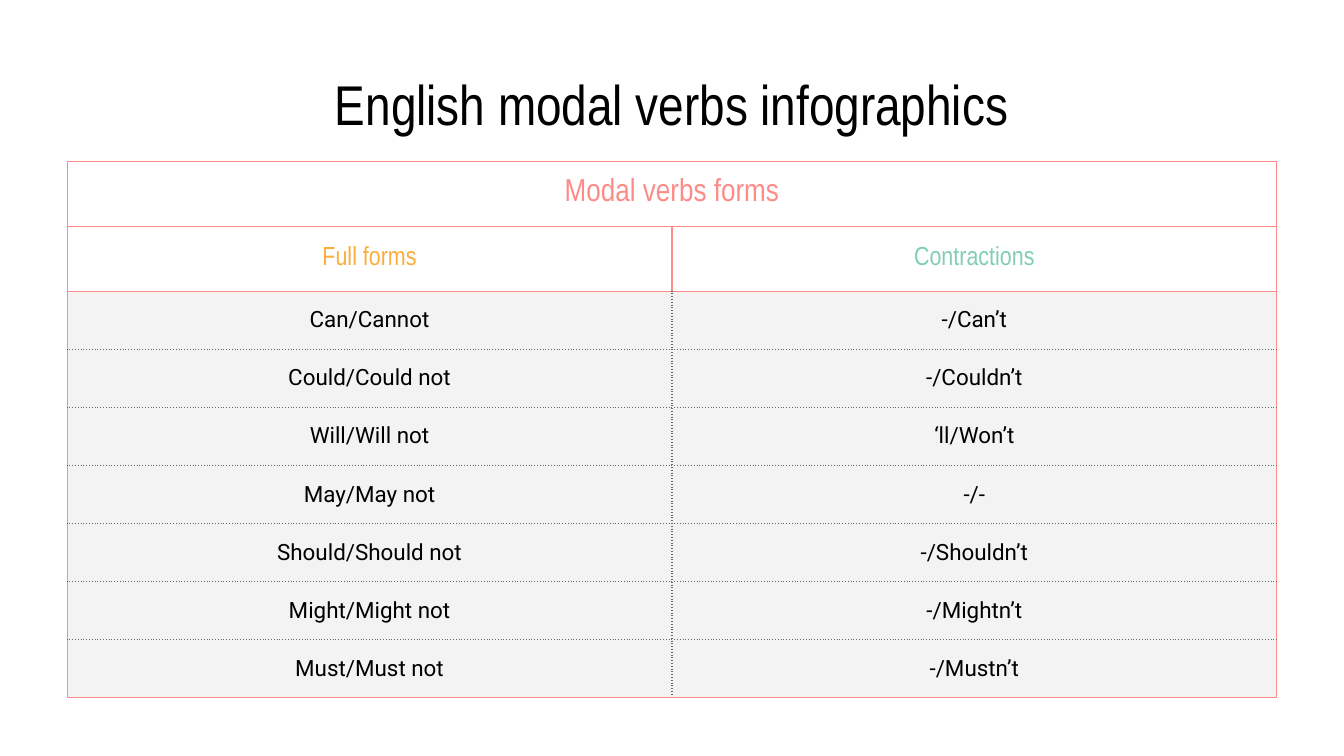
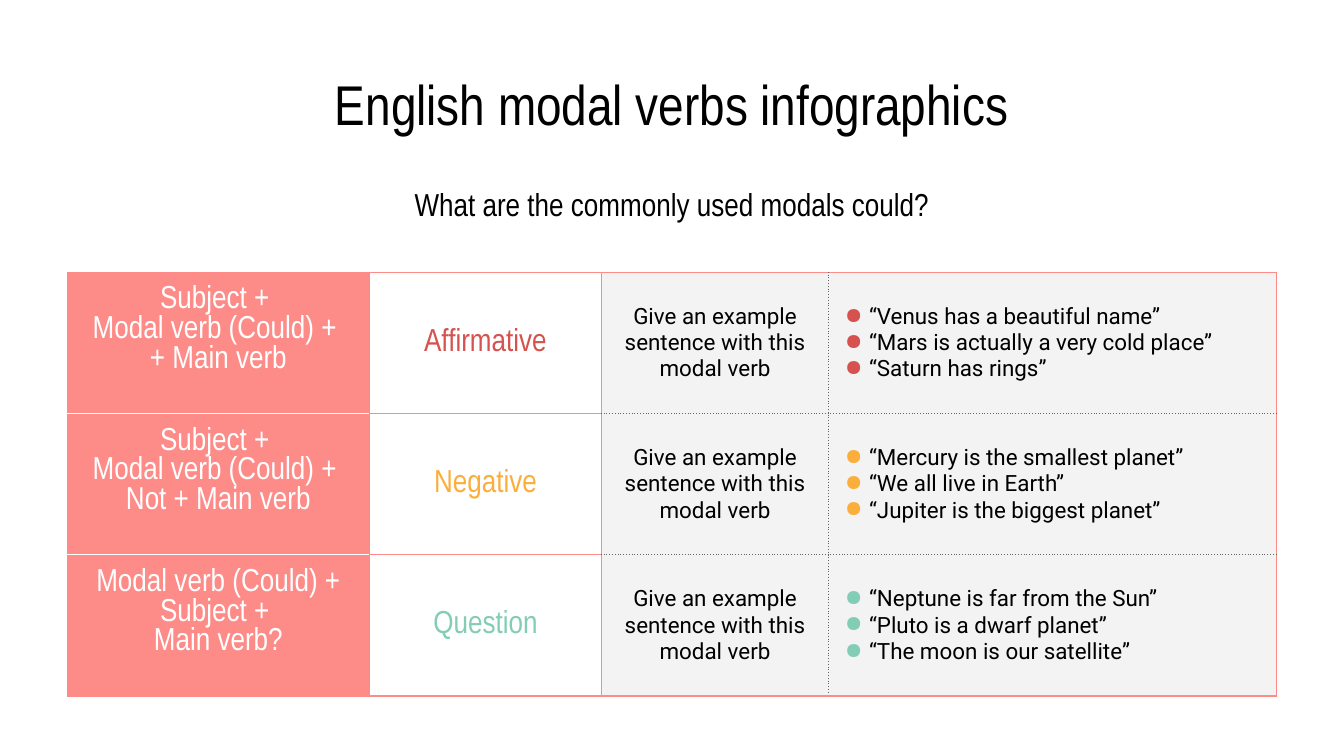
from dataclasses import dataclass

from lxml import etree
from pptx import Presentation
from pptx.dml.color import RGBColor
from pptx.enum import text
from pptx.oxml import ns
from pptx.util import Pt


@dataclass(frozen=True)
class Theme:
    coral: str = "FD8C89"
    red: str = "D5524E"
    amber: str = "FBAE3C"
    mint: str = "83CDB7"
    grey: str = "F3F3F3"
    dots: str = "666666"
    black: str = "000000"
    white: str = "FFFFFF"
    heading: str = "Arial Narrow"
    body: str = "Roboto"
    title_size: int = 30
    lead_size: int = 17
    label_size: int = 14
    body_size: int = 12
    line: float = 0.75


THEME = Theme()
# Border codes: colour and dash
BORDERS = {
    "c": (THEME.coral, "solid"),
    "d": (THEME.dots, "sysDot"),
    "w": (THEME.white, "solid"),
}
MARGIN, WIDTH = 36, 648
PAD = 7.2
TITLE = "English modal verbs infographics"


def add_xml(parent, tag, **attrs):
    return etree.SubElement(parent, ns.qn(tag), **attrs)


def edges(left, right, inner, i, count):
    """Border codes in the order left, top, right, bottom; coral outside."""
    top = "c" if i == 0 else inner
    bottom = "c" if i == count - 1 else inner
    return left + top + right + bottom


class Deck:
    def __init__(self, theme):
        self.theme = theme
        self.prs = Presentation()
        self.prs.slide_width, self.prs.slide_height = Pt(720), Pt(405)
        self.s = None

    def slide(self, title):
        self.s = self.prs.slides.add_slide(self.prs.slide_layouts[6])
        self.textbox(title, MARGIN, 32.4, WIDTH, 45.4, self.theme.title_size)

    def textbox(self, line, left, top, width, height, size):
        sp = self.s.shapes.add_textbox(Pt(left), Pt(top), Pt(width), Pt(height))
        tf = sp.text_frame
        tf.word_wrap = True
        tf.vertical_anchor = text.MSO_ANCHOR.MIDDLE
        tf.margin_left = tf.margin_right = tf.margin_top = tf.margin_bottom = Pt(PAD)
        self.add_lines(tf, [line], size, self.theme.heading, self.theme.black)

    def add_lines(self, tf, lines, size, font, color, bullet=None):
        """Fill a text frame; a bullet colour makes a left-aligned list."""
        for i, line in enumerate(lines):
            p = tf.add_paragraph() if i else tf.paragraphs[0]
            p.alignment = text.PP_ALIGN.LEFT if bullet else text.PP_ALIGN.CENTER
            if bullet:
                self.bullet(p, bullet)
            r = p.add_run()
            r.text = line
            r.font.size, r.font.name = Pt(size), font
            r.font.color.rgb = RGBColor.from_string(color)

    def bullet(self, p, color):
        pPr = p._p.get_or_add_pPr()
        pPr.set("marL", str(Pt(21.6)))
        pPr.set("indent", str(-Pt(13)))
        add_xml(add_xml(pPr, "a:buClr"), "a:srgbClr", val=color)
        add_xml(pPr, "a:buChar", char="●")

    def table(self, top, cols, rows):
        frame = self.s.shapes.add_table(
            len(rows), len(cols), Pt(MARGIN), Pt(top), Pt(sum(cols)), Pt(sum(rows)))
        table = frame.table
        table.first_row = table.horz_banding = False
        for col, width in zip(table.columns, cols):
            col.width = Pt(width)
        for row, height in zip(table.rows, rows):
            row.height = Pt(height)
        return table

    def borders(self, cell, codes):
        tcPr = cell._tc.get_or_add_tcPr()
        for side, code in zip("LTRB", codes):
            color, dash = BORDERS[code]
            ln = add_xml(tcPr, f"a:ln{side}", w=str(Pt(self.theme.line)))
            add_xml(add_xml(ln, "a:solidFill"), "a:srgbClr", val=color)
            add_xml(ln, "a:prstDash", val=dash)

    def cell(self, cell, lines, codes, size, color, fill=None, pad=(0, 0),
             bullet=None, anchor=text.MSO_ANCHOR.MIDDLE):
        """Fill in one cell; pad is (sides, top and bottom)."""
        t = self.theme
        self.borders(cell, codes)
        if fill:
            cell.fill.solid()
            cell.fill.fore_color.rgb = RGBColor.from_string(fill)
        else:
            cell.fill.background()
        cell.margin_left = cell.margin_right = Pt(pad[0])
        cell.margin_top = cell.margin_bottom = Pt(pad[1])
        cell.vertical_anchor = anchor
        font = t.body if size == t.body_size else t.heading
        self.add_lines(cell.text_frame, lines, size, font, color, bullet)


def forms_slide(deck):
    t = deck.theme
    forms = [
        ("Can/Cannot", "-/Can’t"),
        ("Could/Could not", "-/Couldn’t"),
        ("Will/Will not", "‘ll/Won’t"),
        ("May/May not", "-/-"),
        ("Should/Should not", "-/Shouldn’t"),
        ("Might/Might not", "-/Mightn’t"),
        ("Must/Must not", "-/Mustn’t"),
    ]
    deck.slide(TITLE)
    table = deck.table(86.4, [WIDTH / 2] * 2, [34.8] * 2 + [31.1] * len(forms))
    table.cell(0, 0).merge(table.cell(0, 1))
    deck.cell(table.cell(0, 0), ["Modal verbs forms"], "cccc", t.lead_size, t.coral)
    deck.borders(table.cell(0, 1), "cccc")
    for j, (label, color) in enumerate([("Full forms", t.amber), ("Contractions", t.mint)]):
        deck.cell(table.cell(1, j), [label], "cccc", t.label_size, color)
    for i, pair in enumerate(forms):
        for j, (form, sides) in enumerate(zip(pair, ("cd", "dc"))):
            deck.cell(table.cell(i + 2, j), [form], edges(*sides, "d", i, len(forms)),
                      t.body_size, t.black, t.grey)


def could_slide(deck):
    t = deck.theme
    prompt = "Give an example sentence with this modal verb"
    uses = [
        (["Subject + ", "Modal verb (Could) + ", "+ Main verb"], "Affirmative", t.red,
         ["“Venus has a beautiful name”", "“Mars is actually a very cold place”",
          "“Saturn has rings”"]),
        (["Subject + ", "Modal verb (Could) + ", "Not + Main verb"], "Negative", t.amber,
         ["“Mercury is the smallest planet”", "“We all live in Earth”",
          "“Jupiter is the biggest planet”"]),
        (["Modal verb (Could) + Subject + ", "Main verb?"], "Question", t.mint,
         ["“Neptune is far from the Sun”", "“Pluto is a dwarf planet”",
          "“The moon is our satellite”"]),
    ]
    deck.slide(TITLE)
    deck.textbox("What are the commonly used modals could?", 180, 93.2, 360, 31.7, t.lead_size)
    count = len(uses)
    table = deck.table(145.9, [162, 124.2, 121.8, 240], [71.8] * count)
    for i, (pattern, use, color, examples) in enumerate(uses):
        formula, label, task, samples = table.rows[i].cells
        deck.cell(formula, pattern, edges("c", "c", "w", i, count), t.lead_size, t.white,
                  t.coral, (PAD, PAD), anchor=text.MSO_ANCHOR.TOP)
        deck.cell(label, [use], "cccc", t.lead_size, color, pad=(PAD, PAD))
        deck.cell(task, [prompt], edges("c", "d", "d", i, count), t.body_size, t.black,
                  t.grey, (PAD, PAD))
        deck.cell(samples, examples, edges("d", "c", "d", i, count), t.body_size, t.black,
                  t.grey, (0, PAD), bullet=color)


def main():
    deck = Deck(THEME)
    forms_slide(deck)
    could_slide(deck)
    deck.prs.save("out.pptx")


if __name__ == "__main__":
    main()
